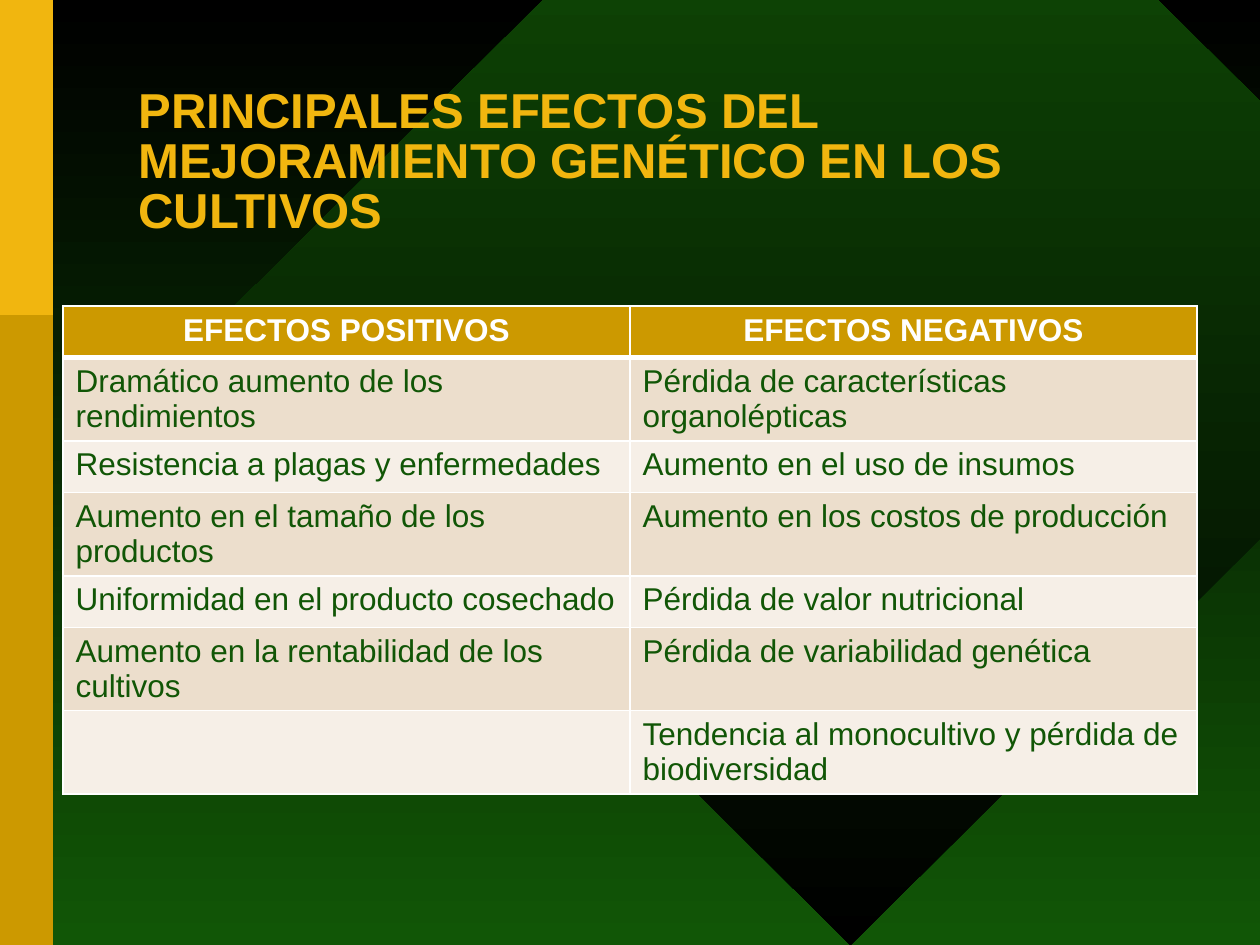
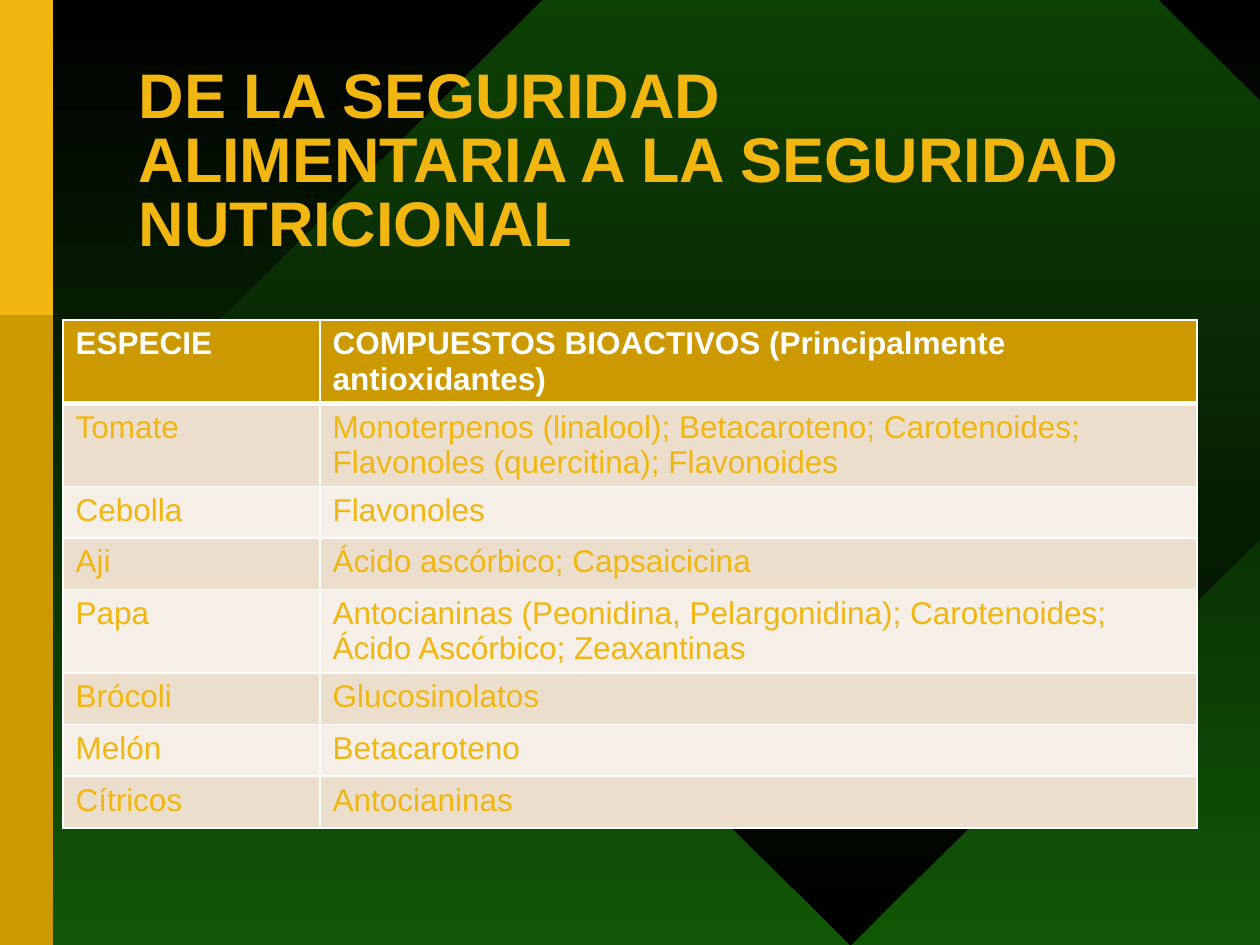
from dataclasses import dataclass

from lxml.etree import SubElement
from pptx import Presentation
from pptx.dml.color import RGBColor
from pptx.enum.shapes import MSO_SHAPE
from pptx.enum.text import MSO_ANCHOR, MSO_AUTO_SIZE, PP_ALIGN
from pptx.oxml.ns import qn
from pptx.util import Inches, Pt


@dataclass(frozen=True)
class Theme:
    font: str = "Arial"
    black: RGBColor = RGBColor(0x00, 0x00, 0x00)
    green: RGBColor = RGBColor(0x11, 0x56, 0x06)
    ochre: RGBColor = RGBColor(0xCC, 0x99, 0x00)
    yellow: RGBColor = RGBColor(0xF1, 0xB6, 0x0F)
    white: RGBColor = RGBColor(0xFF, 0xFF, 0xFF)
    bands: tuple = (RGBColor(0xEC, 0xDE, 0xCC), RGBColor(0xF6, 0xEF, 0xE7))
    cell_size: int = 18
    rule: int = 1
    header_rule: int = 3


theme = Theme()


def fill_vertical(fill, top, bottom):
    fill.gradient()
    fill.gradient_angle = 270
    for stop, color in zip(fill.gradient_stops, (top, bottom)):
        stop.color.rgb = color


def add_border(cell, side, width):
    line = SubElement(cell._tc.get_or_add_tcPr(), qn(f"a:ln{side}"), w=str(Pt(width)))
    solid = SubElement(line, qn("a:solidFill"))
    SubElement(solid, qn("a:srgbClr"), val=str(theme.white))


slides = [
    {
        "title": "PRINCIPALES EFECTOS DEL MEJORAMIENTO GENÉTICO EN LOS CULTIVOS",
        "title_size": 28,
        "top": 2.43,
        "columns": (4.5, 4.5),
        "header_align": PP_ALIGN.CENTER,
        "body_color": theme.green,
        "rows": [
            ("EFECTOS POSITIVOS", "EFECTOS NEGATIVOS"),
            ("Dramático aumento de los rendimientos", "Pérdida de características organolépticas"),
            ("Resistencia a plagas y enfermedades", "Aumento en el uso de insumos"),
            ("Aumento en el tamaño de los productos", "Aumento en los costos de producción"),
            ("Uniformidad en el producto cosechado", "Pérdida de valor nutricional"),
            ("Aumento en la rentabilidad de los cultivos", "Pérdida de variabilidad genética"),
            ("", "Tendencia al monocultivo y pérdida de biodiversidad"),
        ],
    },
    {
        "title": "DE LA SEGURIDAD ALIMENTARIA A LA SEGURIDAD NUTRICIONAL",
        "title_size": 36,
        "top": 2.54,
        "columns": (2.04, 6.96),
        "header_align": PP_ALIGN.LEFT,
        "body_color": theme.yellow,
        "rows": [
            ("ESPECIE", "COMPUESTOS BIOACTIVOS (Principalmente antioxidantes)"),
            ("Tomate", "Monoterpenos (linalool); Betacaroteno; Carotenoides; "
                       "Flavonoles (quercitina); Flavonoides"),
            ("Cebolla", "Flavonoles"),
            ("Aji", "Ácido ascórbico; Capsaicicina"),
            ("Papa", "Antocianinas (Peonidina, Pelargonidina); Carotenoides; "
                     "Ácido Ascórbico; Zeaxantinas"),
            ("Brócoli", "Glucosinolatos"),
            ("Melón", "Betacaroteno"),
            ("Cítricos", "Antocianinas"),
        ],
    },
]

deck = Presentation()
deck.slide_width, deck.slide_height = Inches(10), Inches(7.5)
layout = deck.slide_layouts.get_by_name("Title Only")
pages = [deck.slides.add_slide(layout) for _ in slides]

master = deck.slide_master
fill_vertical(master.background.fill, theme.black, theme.green)
decorations = [
    (MSO_SHAPE.DIAMOND, (1.75, -2.42, 10, 9.92), None),
    (MSO_SHAPE.RECTANGLE, (0, 0, 0.42, 7.5), theme.ochre),
    (MSO_SHAPE.RECTANGLE, (0, 0, 0.42, 2.5), theme.yellow),
]
for kind, frame, color in decorations:
    shape = pages[0].shapes.add_shape(kind, *map(Inches, frame))
    shape.shadow.inherit = False
    shape.line.fill.background()
    if color is None:
        fill_vertical(shape.fill, theme.green, theme.black)
    else:
        shape.fill.solid()
        shape.fill.fore_color.rgb = color
    master.shapes.element.append(shape.element)

for page, content in zip(pages, slides):
    title = page.shapes.title
    title.left, title.top, title.width, title.height = map(Inches, (1, 0.67, 8.25, 1.25))
    box = title.text_frame
    box.text = content["title"]
    box.word_wrap = True
    box.auto_size = MSO_AUTO_SIZE.NONE
    box.vertical_anchor = MSO_ANCHOR.MIDDLE
    para = box.paragraphs[0]
    para.alignment = PP_ALIGN.LEFT
    para.line_spacing = 0.85
    para.font.name = theme.font
    para.font.size = Pt(content["title_size"])
    para.font.bold = True
    para.font.color.rgb = theme.yellow

    rows, columns = content["rows"], content["columns"]
    table = page.shapes.add_table(
        len(rows), len(columns), Inches(0.5), Inches(content["top"]),
        Inches(sum(columns)), Inches(0.41 * len(rows)),
    ).table
    table.horz_banding = False
    for column, width in zip(table.columns, columns):
        column.width = Inches(width)
    for row_index, texts in enumerate(rows):
        is_header = row_index == 0
        table.rows[row_index].height = Inches(0.41)
        for column_index, text in enumerate(texts):
            cell = table.cell(row_index, column_index)
            top_rule = theme.header_rule if row_index == 1 else theme.rule
            bottom_rule = theme.header_rule if is_header else theme.rule
            for side, width in zip("LRTB", (theme.rule, theme.rule, top_rule, bottom_rule)):
                add_border(cell, side, width)
            cell.fill.solid()
            cell.fill.fore_color.rgb = theme.ochre if is_header else theme.bands[(row_index - 1) % 2]
            cell.text = text
            para = cell.text_frame.paragraphs[0]
            para.alignment = content["header_align"] if is_header else PP_ALIGN.LEFT
            para.font.name = theme.font
            para.font.size = Pt(theme.cell_size)
            para.font.bold = is_header
            para.font.color.rgb = theme.white if is_header else content["body_color"]

deck.save("out.pptx")
